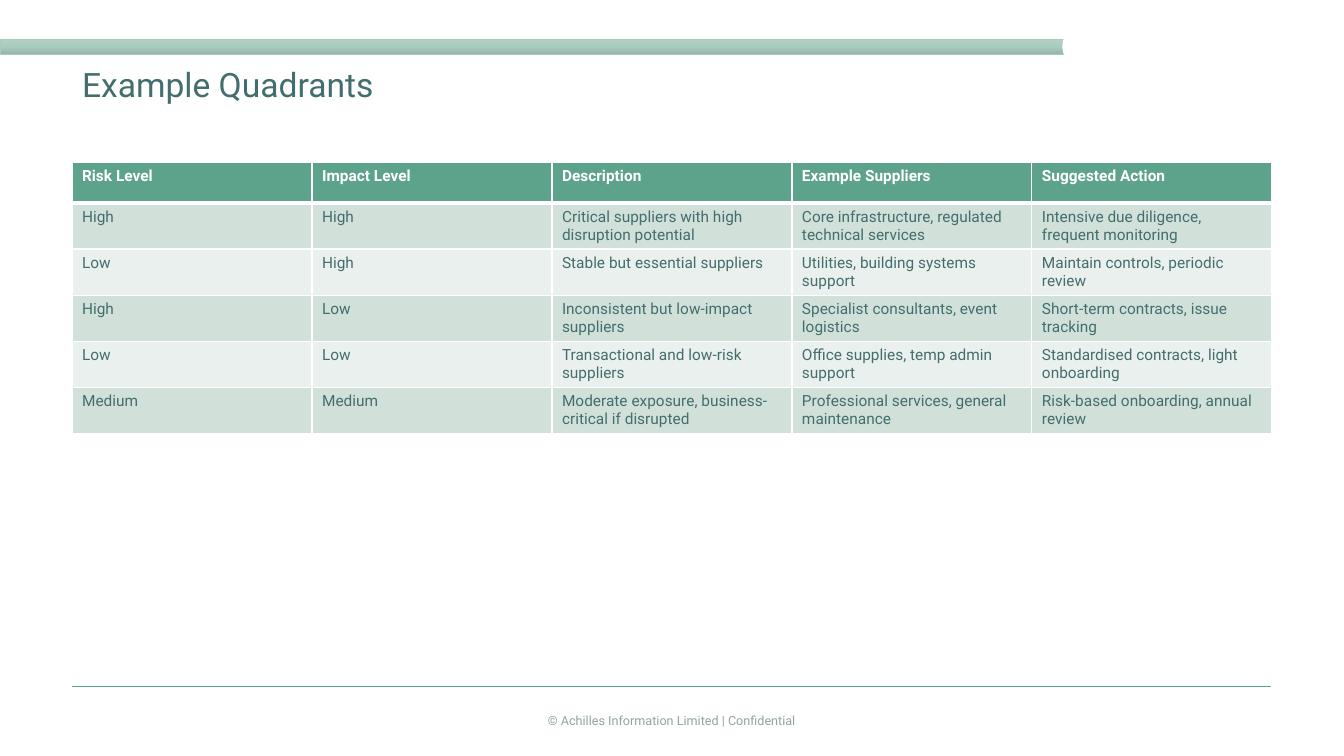
from copy import deepcopy
from dataclasses import dataclass

from pptx import Presentation
from pptx.dml.color import RGBColor
from pptx.enum.shapes import MSO_CONNECTOR, MSO_SHAPE
from pptx.enum.text import MSO_ANCHOR, MSO_AUTO_SIZE, PP_ALIGN
from pptx.oxml.ns import qn
from pptx.util import Emu, Pt
from lxml.etree import SubElement


@dataclass(frozen=True)
class Theme:
    font: str = "Roboto"
    ink: str = "426E6D"
    accent: str = "5DA38C"
    white: str = "FFFFFF"
    muted: str = "93A3A3"
    bands: tuple = ("D2E0DA", "EAF0EE")
    bar_stops: tuple = ((0, "B4D1C6"), (0.5, "A8CCBE"), (1, "94B7AA"))
    bar_edge: str = "AACABE"
    title_size: int = 24
    table_size: int = 11
    footer_size: int = 9


THEME = Theme()
EMU_PER_PX = 914400 / 100.8
SLIDE_SIZE = (1344, 756)
BAR_BOX = (0, 39, 1071, 15)
TITLE_BOX = (72, 60, 1054, 53)
TABLE_BOX = (72, 162, 1200, 271)
FOOTER_BOX = (72, 686, 1199, 55)

QUADRANTS = [
    ("Risk Level", "Impact Level", "Description", "Example Suppliers", "Suggested Action"),
    ("High", "High", "Critical suppliers with high disruption potential",
     "Core infrastructure, regulated technical services",
     "Intensive due diligence, frequent monitoring"),
    ("Low", "High", "Stable but essential suppliers",
     "Utilities, building systems support", "Maintain controls, periodic review"),
    ("High", "Low", "Inconsistent but low-impact suppliers",
     "Specialist consultants, event logistics", "Short-term contracts, issue tracking"),
    ("Low", "Low", "Transactional and low-risk suppliers",
     "Office supplies, temp admin support", "Standardised contracts, light onboarding"),
    ("Medium", "Medium", "Moderate exposure, business-critical if disrupted",
     "Professional services, general maintenance", "Risk-based onboarding, annual review"),
]


def px(*lengths):
    return [Emu(round(length * EMU_PER_PX)) for length in lengths]


def rgb(color):
    return RGBColor.from_string(color)


def write(frame, text, size, color, bold=False, align=PP_ALIGN.LEFT,
          anchor=MSO_ANCHOR.MIDDLE, spacing=None):
    frame.word_wrap = True
    frame.vertical_anchor = anchor
    paragraph = frame.paragraphs[0]
    paragraph.alignment = align
    paragraph.line_spacing = spacing
    run = paragraph.add_run()
    run.text = text
    run.font.name = THEME.font
    run.font.size = Pt(size)
    run.font.bold = bold
    run.font.color.rgb = rgb(color)


def add_top_bar(slide, box):
    """Gradient bar whose right end is cut by a white disc."""
    left, top, width, height = box
    bar = slide.shapes.add_shape(MSO_SHAPE.RECTANGLE, *px(*box))
    bar.shadow.inherit = False
    bar.line.color.rgb = rgb(THEME.bar_edge)
    bar.line.width = Pt(0.5)
    bar.fill.gradient()
    bar.fill.gradient_angle = 270
    stop_list = bar._element.spPr.find(".//" + qn("a:gsLst"))
    stop_list.insert(1, deepcopy(stop_list[0]))
    for stop, (position, color) in zip(bar.fill.gradient_stops, THEME.bar_stops):
        stop.position = position
        stop.color.rgb = rgb(color)

    diameter = 43
    disc = slide.shapes.add_shape(
        MSO_SHAPE.OVAL,
        *px(left + width - 8, top + (height - diameter) / 2, diameter, diameter))
    disc.shadow.inherit = False
    disc.fill.solid()
    disc.fill.fore_color.rgb = rgb(THEME.white)
    disc.line.color.rgb = rgb(THEME.white)
    disc.line.width = Pt(1)


def add_title(slide, box, text):
    title = slide.shapes.title
    title.left, title.top, title.width, title.height = px(*box)
    title.text_frame.auto_size = MSO_AUTO_SIZE.NONE
    write(title.text_frame, text, THEME.title_size, THEME.ink, spacing=0.9)


def set_borders(cell, **widths):
    """Draw white cell borders; widths in points are keyed by L, R, T and B."""
    properties = cell._tc.get_or_add_tcPr()
    for index, side in enumerate("LRTB"):
        line = SubElement(properties, qn("a:ln" + side), w=str(Pt(widths.get(side, 1))))
        fill = SubElement(line, qn("a:solidFill"))
        SubElement(fill, qn("a:srgbClr"), val=THEME.white)
        properties.insert(index, line)


def add_quadrant_table(slide, box, rows, header_height=41):
    left, top, width, height = box
    columns = len(rows[0])
    table = slide.shapes.add_table(len(rows), columns, *px(*box)).table
    for column in table.columns:
        column.width = px(width / columns)[0]
    body_height = (height - header_height) / (len(rows) - 1)
    for r, texts in enumerate(rows):
        is_header = r == 0
        table.rows[r].height = px(header_height if is_header else body_height)[0]
        for c, text in enumerate(texts):
            cell = table.cell(r, c)
            cell.fill.solid()
            cell.fill.fore_color.rgb = rgb(
                THEME.accent if is_header else THEME.bands[(r - 1) % 2])
            set_borders(cell, T=3 if r == 1 else 1, B=3 if is_header else 1)
            write(cell.text_frame, text, THEME.table_size,
                  THEME.white if is_header else THEME.ink,
                  bold=is_header, anchor=MSO_ANCHOR.TOP)


def add_footer(slide, box, text):
    left, top, width, height = box
    rule = slide.shapes.add_connector(
        MSO_CONNECTOR.STRAIGHT, *px(left, top, left + width, top))
    rule.line.color.rgb = rgb(THEME.accent)
    rule.line.width = Pt(0.5)
    SubElement(rule._element.spPr, qn("a:effectLst"))

    text_width, text_height = 454, 40
    notice = slide.shapes.add_textbox(
        *px(left + (width - text_width) / 2, top + height - text_height,
            text_width, text_height))
    write(notice.text_frame, text, THEME.footer_size, THEME.muted, align=PP_ALIGN.CENTER)


def main():
    deck = Presentation()
    deck.slide_width, deck.slide_height = px(*SLIDE_SIZE)
    slide = deck.slides.add_slide(deck.slide_layouts[5])
    add_top_bar(slide, BAR_BOX)
    add_title(slide, TITLE_BOX, "Example Quadrants")
    add_quadrant_table(slide, TABLE_BOX, QUADRANTS)
    add_footer(slide, FOOTER_BOX, "© Achilles Information Limited | Confidential")
    deck.save("out.pptx")


if __name__ == "__main__":
    main()
